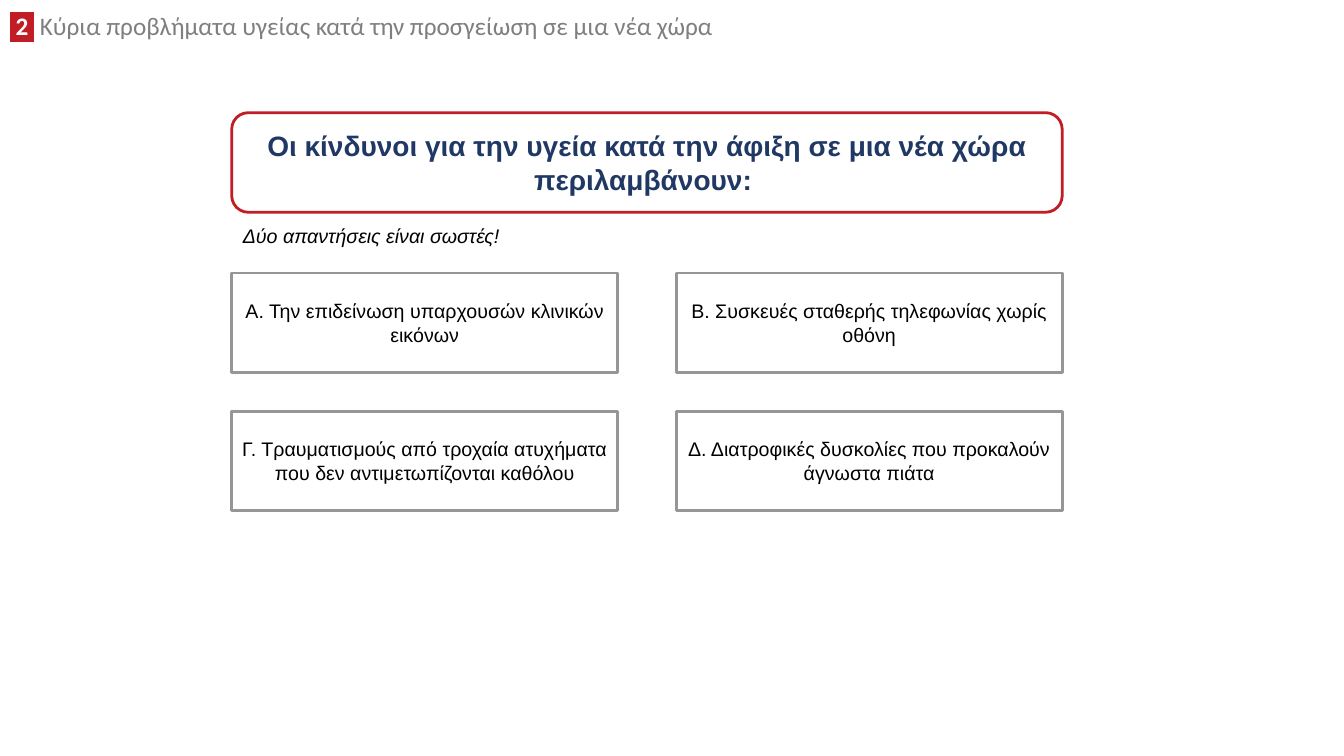
from lxml import etree
from pptx import Presentation
from pptx import util as u
from pptx.dml.color import RGBColor
from pptx.enum import shapes, text
from pptx.oxml.ns import qn

RED, NAVY, GREY = "C01E24", "203864", "969696"
LEFT, BOX_HEIGHT = 5.84, 2.51


def add_text(frame, content, *, size=14, font="Arial", color="000000", bold=False,
             italic=False, align=text.PP_ALIGN.LEFT, anchor=text.MSO_ANCHOR.TOP):
    """Add a run to the frame's first paragraph and return it."""
    frame.word_wrap = True
    frame.vertical_anchor = anchor
    paragraph = frame.paragraphs[0]
    paragraph.alignment = align
    run = paragraph.add_run()
    run.text = content
    run.font.size = u.Pt(size)
    run.font.name = font
    run.font.bold = bold
    run.font.italic = italic
    run.font.color.rgb = RGBColor.from_string(color)
    return run


def add_box(kind, left, top, width, line_color, content, **text_format):
    box = slide.shapes.add_shape(kind, u.Cm(left), u.Cm(top), u.Cm(width), u.Cm(BOX_HEIGHT))
    box.shadow.inherit = False
    box.fill.solid()
    box.fill.fore_color.rgb = RGBColor.from_string("FFFFFF")
    box.line.color.rgb = RGBColor.from_string(line_color)
    box.line.width = u.Pt(2)
    add_text(box.text_frame, content, align=text.PP_ALIGN.CENTER,
             anchor=text.MSO_ANCHOR.MIDDLE, **text_format)


presentation = Presentation()
presentation.slide_width = u.Cm(33.87)
presentation.slide_height = u.Cm(19.05)
slide = presentation.slides.add_slide(presentation.slide_layouts[5])

# Title with a highlighted section number
title = slide.shapes.title
title.left, title.top, title.width, title.height = u.Cm(0), u.Cm(0.28), u.Cm(21.11), u.Cm(0.89)
title.text_frame.auto_size = text.MSO_AUTO_SIZE.NONE
number = add_text(title.text_frame, " 2 ", size=18, font="Calibri", color="FFFFFF", bold=True)
highlight = etree.Element(qn("a:highlight"))
etree.SubElement(highlight, qn("a:srgbClr"), val=RED)
number.font._element.find(qn("a:solidFill")).addnext(highlight)
add_text(title.text_frame, " Κύρια προβλήματα υγείας κατά την προσγείωση σε μια νέα χώρα",
         size=18, font="Calibri", color="7F7F7F")
title.text_frame.paragraphs[0].line_spacing = 0.8

# Question
add_box(shapes.MSO_SHAPE.ROUNDED_RECTANGLE, LEFT, 2.84, 20.93, RED,
        "Οι κίνδυνοι για την υγεία κατά την άφιξη σε μια νέα χώρα περιλαμβάνουν: ",
        size=20, color=NAVY, bold=True)

# Answers in a two-by-two grid
answers = [
    "Α. Την επιδείνωση υπαρχουσών κλινικών εικόνων",
    "Β. Συσκευές σταθερής τηλεφωνίας χωρίς οθόνη",
    "Γ. Τραυματισμούς από τροχαία ατυχήματα που δεν αντιμετωπίζονται καθόλου",
    "Δ. Διατροφικές δυσκολίες που προκαλούν άγνωστα πιάτα",
]
for index, answer in enumerate(answers):
    row, column = divmod(index, 2)
    add_box(shapes.MSO_SHAPE.RECTANGLE, LEFT + column * 11.2, 6.88 + row * 3.48, 9.73,
            GREY, answer)

# Hint
hint = slide.shapes.add_textbox(u.Cm(5.87), u.Cm(5.51), u.Cm(7.75), u.Cm(0.86))
add_text(hint.text_frame, "Δύο απαντήσεις είναι σωστές!", italic=True)

presentation.save("out.pptx")
